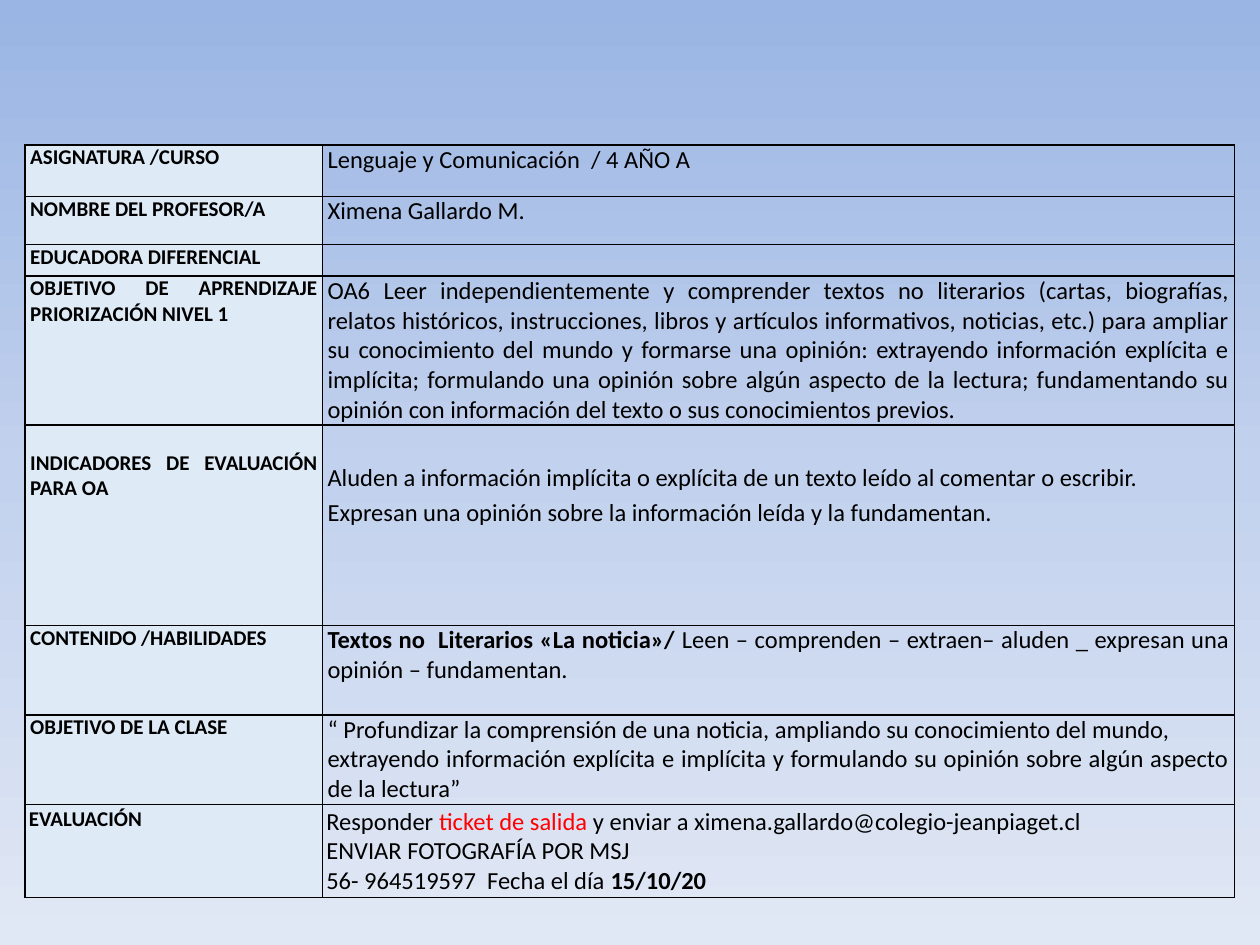
from copy import deepcopy

from pptx import Presentation
from pptx.dml.color import RGBColor
from pptx.enum.text import PP_ALIGN as Align
from pptx.oxml.ns import qn
from pptx.util import Inches, Pt
from lxml.etree import SubElement

THEME = {
    "font": "Calibri", "label_size": 12, "value_size": 14,
    "text": "000000", "accent": "FF0000", "label_fill": "DEEAF6", "border": "000000",
    "background": [(0, "9AB5E4"), (0.5, "C2D1ED"), (1, "E1E8F5")],
}
TABLE_LEFT, TABLE_TOP = 0.2, 1.15
COLUMN_WIDTHS = [2.36, 7.24]
SIDE_MARGIN = 0.04

# Each value is a list of paragraphs; each paragraph is a list of (text, format) runs.
ROWS = [
    {"label": "ASIGNATURA /CURSO", "height": 0.41,
     "value": [[("Lenguaje y Comunicación  / 4 AÑO A", {})]]},
    {"label": "NOMBRE DEL PROFESOR/A", "height": 0.38,
     "value": [[("Ximena Gallardo M.", {})]]},
    {"label": "EDUCADORA DIFERENCIAL", "height": 0.25, "value": [[]]},
    {"label": "OBJETIVO DE APRENDIZAJE PRIORIZACIÓN NIVEL 1", "height": 1.18,
     "value": [[(
         "OA6 Leer independientemente y comprender textos no literarios (cartas, biografías, "
         "relatos históricos, instrucciones, libros y artículos informativos, noticias, etc.) "
         "para ampliar su conocimiento del mundo y formarse una opinión: extrayendo información "
         "explícita e implícita; formulando una opinión sobre algún aspecto de la lectura; "
         "fundamentando su opinión con información del texto o sus conocimientos previos.", {})]]},
    {"label": "INDICADORES DE EVALUACIÓN PARA OA", "height": 1.59,
     "label_top": 0.2, "value_top": 0.27, "align": Align.LEFT, "spacing": 1.15,
     "value": [
         [("Aluden a información implícita o explícita de un texto leído al comentar o escribir.", {})],
         [("Expresan una opinión sobre la información leída y la fundamentan.", {})]]},
    {"label": "CONTENIDO /HABILIDADES", "height": 0.71,
     "value": [[("Textos no  Literarios «La noticia»/ ", {"bold": True}),
                ("Leen – comprenden – extraen– aluden _ expresan una opinión – fundamentan.", {})]]},
    {"label": "OBJETIVO DE LA CLASE", "height": 0.71,
     "value": [
         [("“ Profundizar la comprensión de una noticia, ampliando su conocimiento del mundo,", {})],
         [("extrayendo información explícita e implícita y formulando su opinión sobre algún "
           "aspecto de la lectura”", {})]]},
    {"label": "EVALUACIÓN", "height": 0.74, "side": 0.03, "label_top": 0.02, "value_top": 0.02,
     "value": [
         [("Responder ", {}), ("ticket de salida ", {"color": THEME["accent"]}),
          ("y enviar a ximena.gallardo@colegio-jeanpiaget.cl", {})],
         [("ENVIAR FOTOGRAFÍA POR MSJ", {})],
         [("56- 964519597  Fecha el día ", {}), ("15/10/20", {"bold": True})]]},
]


def paint_background(slide):
    fill = slide.background.fill
    fill.gradient()
    fill.gradient_angle = 270
    stop_list = slide._element.find(".//" + qn("a:gsLst"))
    stop_list.append(deepcopy(stop_list[-1]))
    for stop, (position, color) in zip(fill.gradient_stops, THEME["background"]):
        stop.position = position
        stop.color.rgb = RGBColor.from_string(color)


def add_borders(cell):
    properties = cell._tc.get_or_add_tcPr()
    for index, side in enumerate(("lnL", "lnR", "lnT", "lnB")):
        line = SubElement(properties, qn("a:" + side), w=str(Pt(1)))
        properties.insert(index, line)
        solid = SubElement(line, qn("a:solidFill"))
        SubElement(solid, qn("a:srgbClr"), val=THEME["border"])


def add_run(paragraph, text, size, bold=False, color=THEME["text"]):
    run = paragraph.add_run()
    run.text = text
    run.font.name = THEME["font"]
    run.font.size = Pt(size)
    run.font.bold = bold
    run.font.color.rgb = RGBColor.from_string(color)


def fill_cell(cell, paragraphs, size, top=0, side=SIDE_MARGIN, align=Align.JUSTIFY,
              spacing=None, fill=None):
    cell.margin_left = cell.margin_right = Inches(side)
    cell.margin_top = Inches(top)
    cell.margin_bottom = 0
    if fill:
        cell.fill.solid()
        cell.fill.fore_color.rgb = RGBColor.from_string(fill)
    else:
        cell.fill.background()
    add_borders(cell)
    frame = cell.text_frame
    for index, runs in enumerate(paragraphs):
        paragraph = frame.add_paragraph() if index else frame.paragraphs[0]
        paragraph.alignment = align
        paragraph.line_spacing = spacing
        for text, style in runs:
            add_run(paragraph, text, size, **style)
        if not runs:  # keeps an empty cell from growing its row
            SubElement(paragraph._p, qn("a:endParaRPr"), sz=str(size * 100))


def add_lesson_table(slide):
    heights = [row["height"] for row in ROWS]
    table = slide.shapes.add_table(
        len(ROWS), len(COLUMN_WIDTHS), Inches(TABLE_LEFT), Inches(TABLE_TOP),
        Inches(sum(COLUMN_WIDTHS)), Inches(sum(heights))).table
    table.first_row = table.horz_banding = False
    for column, width in zip(table.columns, COLUMN_WIDTHS):
        column.width = Inches(width)
    for index, row in enumerate(ROWS):
        table.rows[index].height = Inches(row["height"])
        side = row.get("side", SIDE_MARGIN)
        fill_cell(table.cell(index, 0), [[(row["label"], {"bold": True})]], THEME["label_size"],
                  top=row.get("label_top", 0), side=side, fill=THEME["label_fill"])
        fill_cell(table.cell(index, 1), row["value"], THEME["value_size"],
                  top=row.get("value_top", 0), side=side,
                  align=row.get("align", Align.JUSTIFY), spacing=row.get("spacing"))


def main():
    presentation = Presentation()
    presentation.slide_width, presentation.slide_height = Inches(10), Inches(7.5)
    slide = presentation.slides.add_slide(presentation.slide_layouts[6])
    paint_background(slide)
    add_lesson_table(slide)
    presentation.save("out.pptx")


if __name__ == "__main__":
    main()
